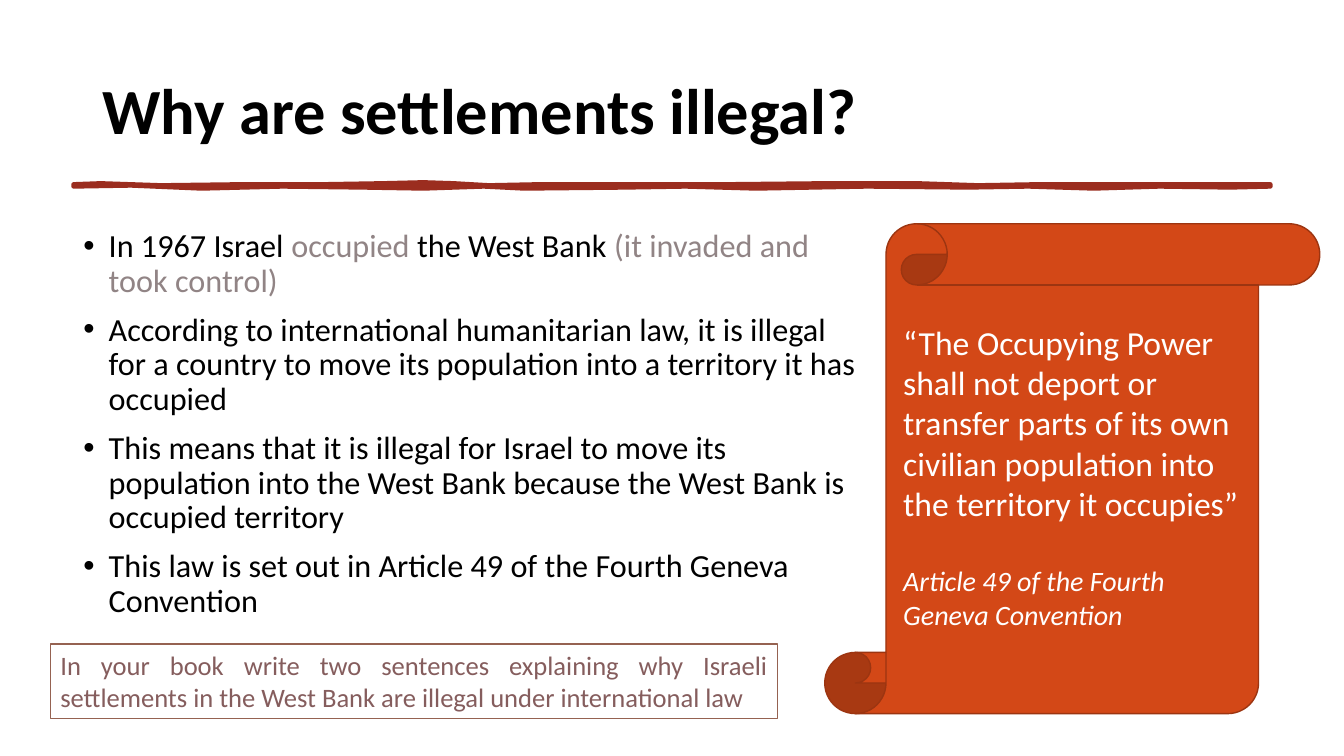
from dataclasses import dataclass

import pptx
import pptx.dml.color
import pptx.enum.shapes
import pptx.enum.text
import pptx.oxml
import pptx.oxml.ns
import pptx.util
from pptx.util import Inches

RGBColor = pptx.dml.color.RGBColor
Align = pptx.enum.text.PP_ALIGN
Anchor = pptx.enum.text.MSO_ANCHOR
Preset = pptx.enum.shapes.MSO_SHAPE

BLACK = RGBColor(0x00, 0x00, 0x00)
WHITE = RGBColor(0xFF, 0xFF, 0xFF)
GREY = RGBColor(0x91, 0x84, 0x85)
BRICK = RGBColor(0x9B, 0x2D, 0x1F)
ORANGE = RGBColor(0xD3, 0x48, 0x17)
DARK_ORANGE = RGBColor(0x9C, 0x35, 0x11)
BROWN = RGBColor(0x95, 0x62, 0x51)
MAUVE = RGBColor(0x85, 0x5D, 0x5D)
FONT = "Calibri"


@dataclass(frozen=True)
class Box:
    left: float
    top: float
    width: float
    height: float

    def emu(self) -> tuple:
        return tuple(Inches(v) for v in (self.left, self.top, self.width, self.height))


@dataclass(frozen=True)
class Phrase:
    text: str
    color: RGBColor = BLACK


REASONS = [
    [Phrase("In 1967 Israel "), Phrase("occupied", GREY), Phrase(" the West Bank "),
     Phrase("(it invaded and took control)", GREY)],
    [Phrase("According to international humanitarian law, it is illegal for a country "
            "to move its population into a territory it has occupied")],
    [Phrase("This means that it is illegal for Israel to move its population into the "
            "West Bank because the West Bank is occupied territory")],
    [Phrase("This law is set out in Article 49 of the Fourth Geneva Convention")],
]

# (x, y) crests and dips along the two edges of the hand-drawn rule
UPPER_EDGE = [(0.73, 1.83), (1.0, 1.82), (1.6, 1.84), (2.4, 1.83), (3.2, 1.83), (3.8, 1.82),
              (4.2, 1.81), (4.5, 1.82), (4.85, 1.84), (5.35, 1.83), (6.46, 1.83), (7.2, 1.83),
              (8.2, 1.82), (9.1, 1.82), (9.7, 1.84), (10.3, 1.83), (10.8, 1.83), (11.6, 1.83),
              (12.6, 1.83)]
LOWER_EDGE = [(12.6, 1.85), (12.2, 1.86), (11.5, 1.85), (10.85, 1.87), (10.2, 1.85),
              (9.6, 1.86), (8.6, 1.85), (7.5, 1.87), (6.8, 1.85), (6.2, 1.86), (5.2, 1.87),
              (4.8, 1.85), (4.2, 1.87), (3.6, 1.86), (2.8, 1.85), (2.0, 1.87), (1.3, 1.84),
              (0.73, 1.85)]


def paint(shape, fill: RGBColor, line: RGBColor, weight: float = 1) -> None:
    shape.shadow.inherit = False
    shape.fill.solid()
    shape.fill.fore_color.rgb = fill
    shape.line.color.rgb = line
    shape.line.width = pptx.util.Pt(weight)


def write(paragraph, text: str, *, size: float, color: RGBColor = BLACK,
          bold: bool = False, italic: bool = False) -> None:
    run = paragraph.add_run()
    run.text = text
    run.font.name = FONT
    run.font.size = pptx.util.Pt(size)
    run.font.color.rgb = color
    run.font.bold = bold
    run.font.italic = italic


def add_text_frame(slide, box: Box, anchor=Anchor.TOP):
    frame = slide.shapes.add_textbox(*box.emu()).text_frame
    frame.word_wrap = True
    frame.vertical_anchor = anchor
    return frame


def add_bullet(paragraph) -> None:
    properties = paragraph._p.get_or_add_pPr()
    properties.set("marL", str(Inches(0.25)))
    properties.set("indent", str(-Inches(0.25)))
    namespace = pptx.oxml.ns.nsdecls("a")
    for xml in (f'<a:buFont {namespace} typeface="Arial"/>', f'<a:buChar {namespace} char="•"/>'):
        properties.append(pptx.oxml.parse_xml(xml))


def draw_heading(slide) -> None:
    title = add_text_frame(slide, Box(0.92, 0.4, 11.5, 1.45), Anchor.MIDDLE).paragraphs[0]
    title.line_spacing = 0.9
    write(title, "Why are settlements illegal?", size=46, bold=True)

    start, *outline = [(Inches(x), Inches(y)) for x, y in UPPER_EDGE + LOWER_EDGE]
    builder = slide.shapes.build_freeform(*start)
    builder.add_line_segments(outline, close=True)
    paint(builder.convert_to_shape(), BRICK, BRICK, 3.25)


def draw_reasons(slide) -> None:
    frame = add_text_frame(slide, Box(0.73, 2.23, 7.9, 4.65))
    for index, phrases in enumerate(REASONS):
        reason = frame.add_paragraph() if index else frame.paragraphs[0]
        reason.line_spacing = 0.9
        reason.space_before = pptx.util.Pt(10)
        add_bullet(reason)
        for phrase in phrases:
            write(reason, phrase.text, size=23, color=phrase.color)


def draw_scroll(slide) -> None:
    scroll = slide.shapes.add_shape(Preset.VERTICAL_SCROLL, *Box(8.18, 2.22, 4.91, 4.86).emu())
    paint(scroll, ORANGE, DARK_ORANGE)
    frame = add_text_frame(slide, Box(8.86, 3.14, 3.59, 3.94))
    write(frame.paragraphs[0], "“The Occupying Power shall not deport or transfer parts of its own "
          "civilian population into the territory it occupies”", size=24, color=WHITE)
    citation = frame.add_paragraph()
    citation.space_before = pptx.util.Pt(29)
    write(citation, "Article 49 of the Fourth Geneva Convention", size=20, color=WHITE, italic=True)


def draw_task(slide) -> None:
    task = slide.shapes.add_shape(Preset.RECTANGLE, *Box(0.5, 6.39, 7.21, 0.74).emu())
    paint(task, WHITE, BROWN)
    task.text_frame.word_wrap = True
    task.text_frame.vertical_anchor = Anchor.TOP
    instruction = task.text_frame.paragraphs[0]
    instruction.alignment = Align.JUSTIFY
    write(instruction, "In your book write two sentences explaining why Israeli settlements "
          "in the West Bank are illegal under international law", size=19, color=MAUVE)


def main() -> None:
    deck = pptx.Presentation()
    deck.slide_width, deck.slide_height = Inches(13.33), Inches(7.5)
    slide = deck.slides.add_slide(deck.slide_layouts[6])
    draw_heading(slide)
    draw_reasons(slide)
    draw_scroll(slide)
    draw_task(slide)
    deck.save("out.pptx")


if __name__ == "__main__":
    main()
